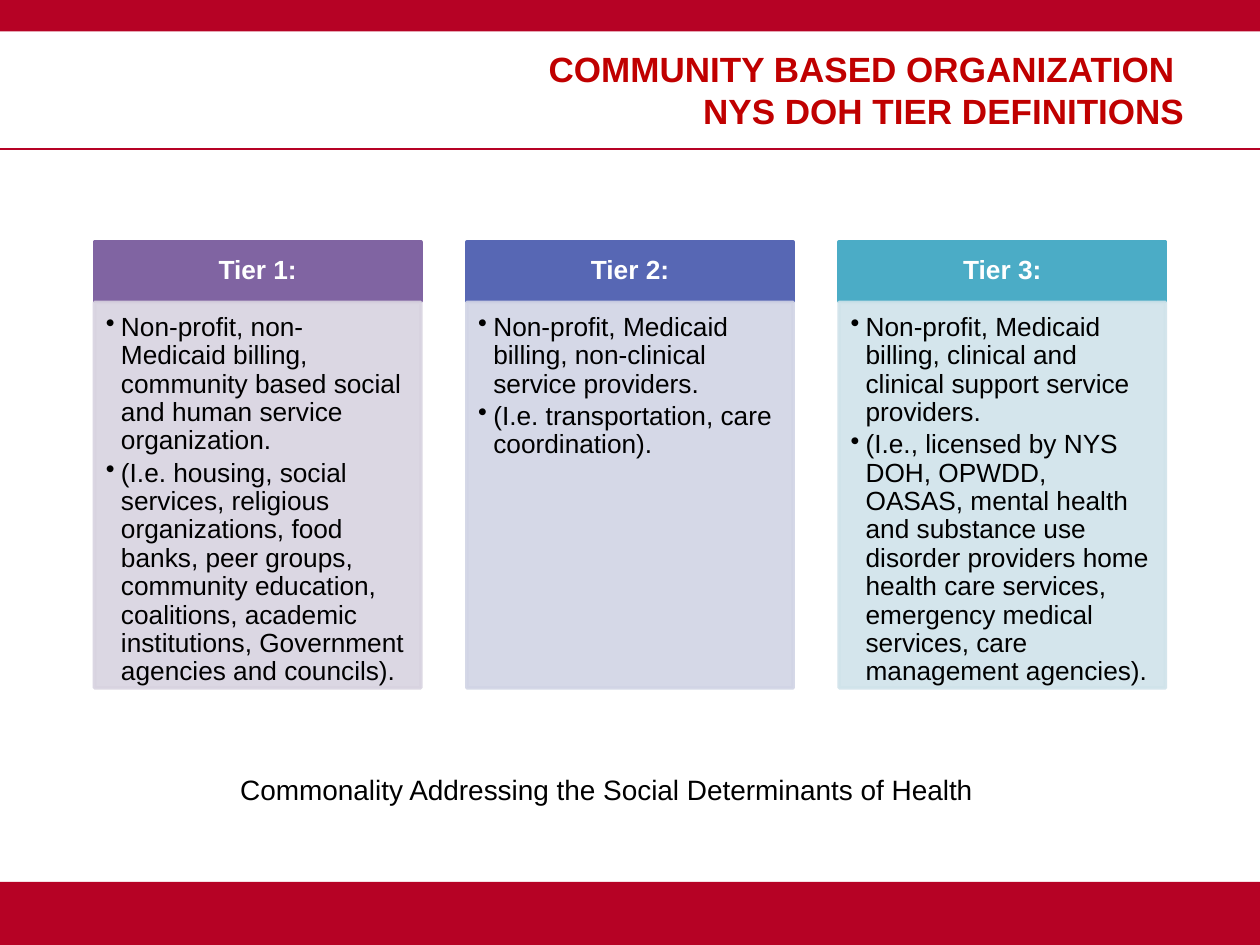
from dataclasses import dataclass

from lxml.etree import SubElement
from pptx import Presentation
from pptx.dml.color import RGBColor
from pptx.enum.shapes import MSO_CONNECTOR as Link, MSO_SHAPE as Shape
from pptx.enum.text import MSO_ANCHOR as Anchor, MSO_AUTO_SIZE as Fit, PP_ALIGN as Align
from pptx.oxml.ns import qn
from pptx.util import Inches, Pt

RED = "B60225"


@dataclass
class Tier:
    name: str
    head: str
    body: str
    points: list[str]


TIERS = [
    Tier("Tier 1:", "8064A2", "D8D3E0", [
        "Non-profit, non-Medicaid billing, community based social and human "
        "service organization.",
        "(I.e. housing, social services, religious organizations, food banks, "
        "peer groups, community education, coalitions, academic institutions, "
        "Government agencies and councils).",
    ]),
    Tier("Tier 2:", "5767B4", "D1D4E5", [
        "Non-profit, Medicaid billing, non-clinical service providers.",
        "(I.e. transportation, care coordination).",
    ]),
    Tier("Tier 3:", "4BACC6", "D0E3EA", [
        "Non-profit, Medicaid billing, clinical and clinical support service "
        "providers.",
        "(I.e., licensed by NYS DOH, OPWDD, OASAS, mental health and substance "
        "use disorder providers home health care services, emergency medical "
        "services, care management agencies).",
    ]),
]


def paint(form, color: str) -> None:
    """Give a fill, line or font format one solid colour."""
    if hasattr(form, "solid"):
        form.solid()
        form = form.fore_color
    else:
        form = form.color
    form.rgb = RGBColor.from_string(color)


def fade(fill, percent: int) -> None:
    """Set the opacity of a solid fill."""
    for node in fill.iter(qn("a:srgbClr")):
        SubElement(node, qn("a:alpha"), val=str(percent * 1000))


def add_box(slide, left: float, top: float, width: float, height: float,
            color: str, edge: float = 0):
    box = slide.shapes.add_shape(Shape.RECTANGLE, Inches(left), Inches(top),
                                 Inches(width), Inches(height))
    box.shadow.inherit = False
    paint(box.fill, color)
    if edge:
        paint(box.line, color)
        box.line.width = Pt(edge)
    else:
        box.line.fill.background()
    return box


def add_bullet(para, indent: float) -> None:
    props = para._p.get_or_add_pPr()
    props.set("marL", str(Inches(indent)))
    props.set("indent", str(-Inches(indent)))
    SubElement(props, qn("a:buChar"), char="•")


def write(shape, lines: list[str], size: float, color: str, bold: bool = False,
          align=Align.CENTER, anchor=Anchor.MIDDLE, inset=(0.1, 0.05, 0.1, 0.05),
          spacing: float = 1.0, after: float = 0, indent: float = 0) -> None:
    """Fill a shape with paragraphs; inset is left, top, right, bottom."""
    frame = shape.text_frame
    frame.word_wrap = True
    frame.auto_size = Fit.NONE
    frame.vertical_anchor = anchor
    (frame.margin_left, frame.margin_top,
     frame.margin_right, frame.margin_bottom) = map(Inches, inset)
    for i, line in enumerate(lines):
        para = frame.add_paragraph() if i else frame.paragraphs[0]
        para.text = line
        para.alignment = align
        para.line_spacing = spacing
        para.space_before = Pt(0)
        para.space_after = Pt(after)
        if indent:
            add_bullet(para, indent)
        for run in para.runs:
            run.font.name = "Arial"
            run.font.size = Pt(size)
            run.font.bold = bold
            paint(run.font, color)


def add_tier(slide, tier: Tier, left: float) -> None:
    width = 2.59
    head = add_box(slide, left, 1.92, width, 0.47, tier.head, edge=2)
    write(head, [tier.name], 15, "FFFFFF", bold=True, spacing=0.9,
          inset=(0.12, 0.07, 0.12, 0.07))
    card = add_box(slide, left, 2.4, width, 3.06, tier.body, edge=2)
    fade(card._element.spPr, 90)
    write(card, tier.points, 15, "000000", align=Align.LEFT, anchor=Anchor.TOP,
          inset=(0.09, 0.09, 0.12, 0.13), spacing=0.9, after=2.25, indent=0.12)


def main() -> None:
    deck = Presentation()
    deck.slide_width, deck.slide_height = Inches(10), Inches(7.5)
    slide = deck.slides.add_slide(deck.slide_layouts[5])

    # Bands and rule
    add_box(slide, 0, 7, 10, 0.5, RED)
    add_box(slide, 0, 0, 10, 0.25, RED)
    rule = slide.shapes.add_connector(Link.STRAIGHT, 0, Inches(1.18),
                                      Inches(10), Inches(1.18))
    paint(rule.line, RED)
    rule.line.width = Pt(1)
    SubElement(rule._element.spPr, qn("a:effectLst"))

    # Title
    title = slide.shapes.title
    title.left, title.top = Inches(3.24), Inches(0.31)
    title.width, title.height = Inches(6.26), Inches(0.8)
    write(title, ["COMMUNITY BASED ORGANIZATION \v NYS DOH TIER DEFINITIONS"],
          20, "C00000", bold=True, align=Align.RIGHT)

    # Tier columns
    for i, tier in enumerate(TIERS):
        add_tier(slide, tier, 0.75 + i * 2.955)

    # Closing line
    note = slide.shapes.add_textbox(Inches(1.47), Inches(6.08),
                                    Inches(6.75), Inches(0.37))
    write(note, ["Commonality Addressing the Social Determinants of Health "],
          16, "000000", anchor=Anchor.TOP)

    deck.save("out.pptx")


if __name__ == "__main__":
    main()
